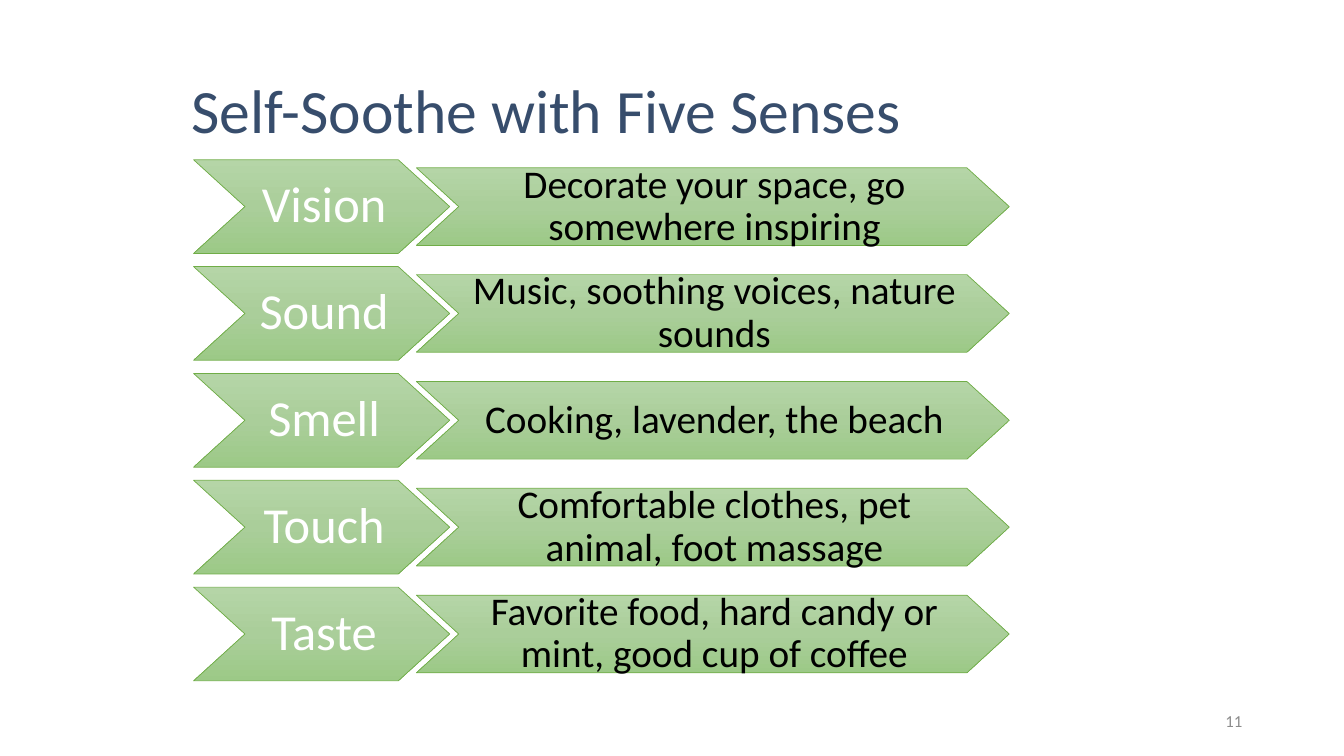
import copy

import pptx
import pptx.dml.color
import pptx.enum.text
import pptx.oxml.ns
import pptx.util

Inches = pptx.util.Inches
Pt = pptx.util.Pt
RGBColor = pptx.dml.color.RGBColor
Align = pptx.enum.text.PP_ALIGN
Anchor = pptx.enum.text.MSO_ANCHOR

FONT = "Calibri"
NAVY = RGBColor(0x37, 0x4D, 0x6C)
GRAY = RGBColor(0x8C, 0x8C, 0x8C)
WHITE = RGBColor(0xFF, 0xFF, 0xFF)
BLACK = RGBColor(0x00, 0x00, 0x00)
GREEN_LINE = RGBColor(0x70, 0xAD, 0x47)
GREEN_STOPS = [
    (0, RGBColor(0xB5, 0xD5, 0xA7)),
    (0.5, RGBColor(0xAA, 0xCE, 0x9A)),
    (1, RGBColor(0x9C, 0xC9, 0x87)),
]

FIRST_MIDDLE = 2.05
ROW_PITCH = 1.06
SENSES = [
    ("Vision", "Decorate your space, go somewhere inspiring"),
    ("Sound", "Music, soothing voices, nature sounds"),
    ("Smell", "Cooking, lavender, the beach"),
    ("Touch", "Comfortable clothes, pet animal, foot massage"),
    ("Taste", "Favorite food, hard candy or mint, good cup of coffee"),
]


def write_text(shape, text, size, color, align, line_spacing=1.0):
    frame = shape.text_frame
    frame.word_wrap = True
    frame.vertical_anchor = Anchor.MIDDLE
    para = frame.paragraphs[0]
    para.alignment = align
    para.line_spacing = line_spacing
    span = para.add_run()
    span.text = text
    span.font.name = FONT
    span.font.size = Pt(size)
    span.font.color.rgb = color


def add_text_box(page, left, top, width, height, *text_style):
    box = page.shapes.add_textbox(
        Inches(left), Inches(top), Inches(width), Inches(height))
    write_text(box, *text_style)


def fill_green(shape):
    """Give the shape a vertical gradient of three greens."""
    shape.fill.gradient()
    shape.fill.gradient_angle = 270
    stop_list = shape.fill._xPr.find(".//" + pptx.oxml.ns.qn("a:gsLst"))
    stop_list.insert(1, copy.deepcopy(stop_list[0]))
    for stop, (position, color) in zip(shape.fill.gradient_stops, GREEN_STOPS):
        stop.position = position
        stop.color.rgb = color


def add_chevron(page, left, middle, width, height, notch, margins, text, size, color):
    """Draw a chevron centred on the height `middle`; margins are left, right, vertical."""
    top, bottom = middle - height / 2, middle + height / 2
    right = left + width
    corners = [
        (right - notch, top), (right, middle), (right - notch, bottom),
        (left, bottom), (left + notch, middle),
    ]
    builder = page.shapes.build_freeform(Inches(left), Inches(top))
    builder.add_line_segments([(Inches(x), Inches(y)) for x, y in corners], close=True)
    chevron = builder.convert_to_shape()
    chevron.shadow.inherit = False
    fill_green(chevron)
    chevron.line.color.rgb = GREEN_LINE
    chevron.line.width = Pt(0.5)
    frame = chevron.text_frame
    frame.margin_left, frame.margin_right = Inches(margins[0]), Inches(margins[1])
    frame.margin_top = frame.margin_bottom = Inches(margins[2])
    write_text(chevron, text, size, color, Align.CENTER, 0.9)


def main():
    deck = pptx.Presentation()
    deck.slide_width, deck.slide_height = Inches(13.33), Inches(7.5)
    page = deck.slides.add_slide(deck.slide_layouts[6])

    add_text_box(page, 1.8, 0.4, 10.61, 1.45,
                 "Self-Soothe with Five Senses", 44, NAVY, Align.LEFT, 0.9)
    for row, (sense, ideas) in enumerate(SENSES):
        middle = FIRST_MIDDLE + row * ROW_PITCH
        add_chevron(page, 1.92, middle, 2.54, 0.93, 0.51,
                    (0.55, 0.5, 0.03), sense, 36, WHITE)
        add_chevron(page, 4.13, middle, 5.88, 0.77, 0.42,
                    (0.45, 0.42, 0.02), ideas, 28, BLACK)
    add_text_box(page, 9.42, 6.95, 3, 0.4, "11", 12, GRAY, Align.RIGHT)

    deck.save("out.pptx")


if __name__ == "__main__":
    main()
